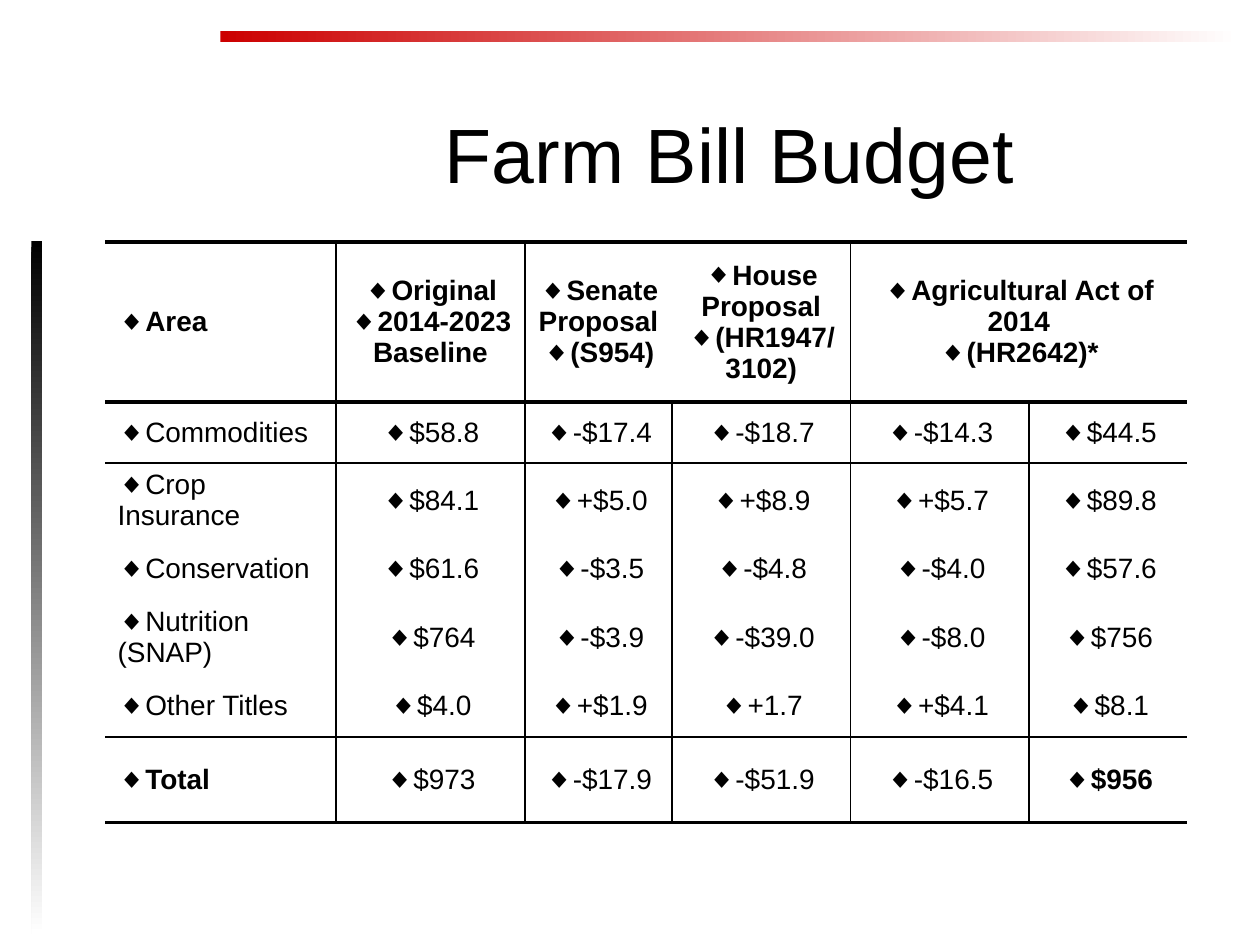
"""Builds the Farm Bill Budget slide with its table and accent bars."""
from lxml import etree
from pptx import Presentation
from pptx.dml.color import RGBColor
from pptx.enum.shapes import MSO_SHAPE
from pptx.enum.text import MSO_ANCHOR, PP_ALIGN
from pptx.oxml import parse_xml
from pptx.oxml.ns import nsdecls, qn
from pptx.util import Pt

RECT = MSO_SHAPE.RECTANGLE
MIDDLE = MSO_ANCHOR.MIDDLE
LEFT, CENTER = PP_ALIGN.LEFT, PP_ALIGN.CENTER
BLACK = RGBColor(0x00, 0x00, 0x00)
WHITE = RGBColor(0xFF, 0xFF, 0xFF)
RED = RGBColor(0xCC, 0x00, 0x00)

COLUMNS = (132, 108, 84, 102, 102, 90.4)
HEIGHTS = (91.5, 35, 39, 39, 39, 39, 49)
RULES = (2.25, 2.25, 1.5, 0, 0, 0, 1, 2.25)
ROWS = (
    ("Area", "Original\n2014-2023 Baseline", "Senate Proposal\n(S954)",
     "House Proposal\n(HR1947/ 3102)", "Agricultural Act of 2014\n(HR2642)*", ""),
    ("Commodities", "$58.8", "-$17.4", "-$18.7", "-$14.3", "$44.5"),
    ("Crop Insurance", "$84.1", "+$5.0", "+$8.9", "+$5.7", "$89.8"),
    ("Conservation", "$61.6", "-$3.5", "-$4.8", "-$4.0", "$57.6"),
    ("Nutrition (SNAP)", "$764", "-$3.9", "-$39.0", "-$8.0", "$756"),
    ("Other Titles", "$4.0", "+$1.9", "+1.7", "+$4.1", "$8.1"),
    ("Total", "$973", "-$17.9", "-$51.9", "-$16.5", "$956"),
)
BOLD_CELLS = {(6, 0), (6, 5)}
OPEN_HEADER_EDGES = {3, 5}
TIGHT_ROWS = range(2, 6)


class SlideBuilder:
    """Holds the text style and the current slide."""

    def __init__(self, slide):
        self.slide = slide
        self.font = {"name": "Arial", "size": Pt(16), "bold": False}

    def style(self, r, **changes):
        for name, value in {**self.font, **changes}.items():
            setattr(r.font, name, value)
        r.font.color.rgb = BLACK

    def bar(self, x, y, w, h, color, angle):
        sp = self.slide.shapes.add_shape(RECT, Pt(x), Pt(y), Pt(w), Pt(h))
        sp.shadow.inherit = False
        sp.line.fill.background()
        sp.fill.gradient()
        sp.fill.gradient_angle = angle
        for stop, rgb in zip(sp.fill.gradient_stops, (color, WHITE)):
            stop.color.rgb = rgb

    def title(self, text, x, y, w, h):
        sp = self.slide.shapes.title
        sp.left, sp.top, sp.width, sp.height = Pt(x), Pt(y), Pt(w), Pt(h)
        tf = sp.text_frame
        tf.vertical_anchor = MIDDLE
        p = tf.paragraphs[0]
        p.alignment = CENTER
        r = p.add_run()
        r.text = text
        self.style(r, size=Pt(44))

    def bullet(self, p):
        pPr = p._p.get_or_add_pPr()
        pPr.set("marL", "0")
        pPr.set("indent", "0")
        color = etree.SubElement(pPr, qn("a:buClr"))
        etree.SubElement(color, qn("a:srgbClr"), val=str(BLACK))
        etree.SubElement(pPr, qn("a:buSzPct"), val="100000")
        etree.SubElement(pPr, qn("a:buFont"), typeface="Arial")
        etree.SubElement(pPr, qn("a:buChar"), char="◆")

    def borders(self, cell, widths):
        tcPr = cell._tc.get_or_add_tcPr()
        for i, (side, width) in enumerate(zip("LRTB", widths)):
            fill = f'<a:solidFill><a:srgbClr val="{BLACK}"/></a:solidFill>' if width else "<a:noFill/>"
            tcPr.insert(i, parse_xml(
                f'<a:ln{side} {nsdecls("a")} w="{int(Pt(width))}">{fill}</a:ln{side}>'))

    def cell(self, cell, text, align, bold, bottom):
        margins = {"margin_left": 7.2, "margin_right": 7.2, "margin_top": 3.6, "margin_bottom": bottom}
        for name, value in margins.items():
            setattr(cell, name, Pt(value))
        cell.vertical_anchor = MIDDLE
        cell.fill.background()
        tf = cell.text_frame
        for i, line in enumerate(text.split("\n")):
            p = tf.add_paragraph() if i else tf.paragraphs[0]
            p.alignment = align
            if line:
                self.bullet(p)
                r = p.add_run()
                r.text = line
                self.style(r, bold=bold)

    def table(self, x, y):
        frame = self.slide.shapes.add_table(
            len(ROWS), len(COLUMNS), Pt(x), Pt(y), Pt(sum(COLUMNS)), Pt(sum(HEIGHTS)))
        table = frame.table
        table.first_row = table.horz_banding = False
        for column, width in zip(table.columns, COLUMNS):
            column.width = Pt(width)
        for row, height in zip(table.rows, HEIGHTS):
            row.height = Pt(height)
        table.cell(0, 4).merge(table.cell(0, 5))
        for i, texts in enumerate(ROWS):
            edges = [int(0 < j < len(COLUMNS) and not (i == 0 and j in OPEN_HEADER_EDGES))
                     for j in range(len(COLUMNS) + 1)]
            bottom = 0 if i in TIGHT_ROWS else 3.6
            for j, text in enumerate(texts):
                cell = table.cell(i, j)
                bold = i == 0 or (i, j) in BOLD_CELLS
                self.cell(cell, text, CENTER if j else LEFT, bold, bottom)
                self.borders(cell, (edges[j], edges[j + 1], RULES[i], RULES[i + 1]))


def main():
    prs = Presentation()
    prs.slide_width, prs.slide_height = Pt(720), Pt(540)
    s = SlideBuilder(prs.slides.add_slide(prs.slide_layouts[5]))
    s.bar(126, 18, 582, 6, RED, 0)
    s.bar(18, 138, 6, 396, BLACK, 270)
    s.title("Farm Bill Budget", 138, 24, 558, 126)
    s.table(60, 138.3)
    prs.save("out.pptx")


if __name__ == "__main__":
    main()
